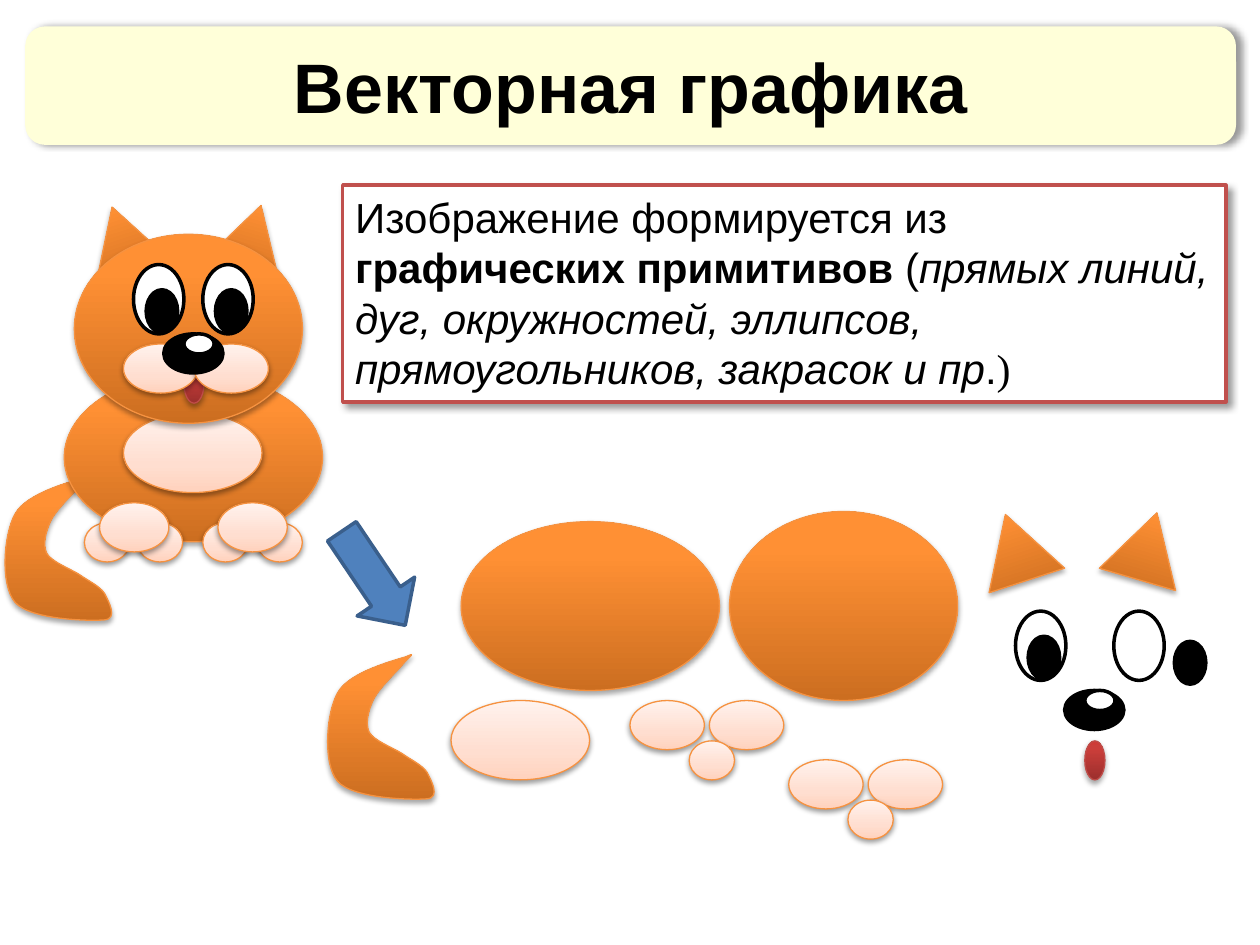
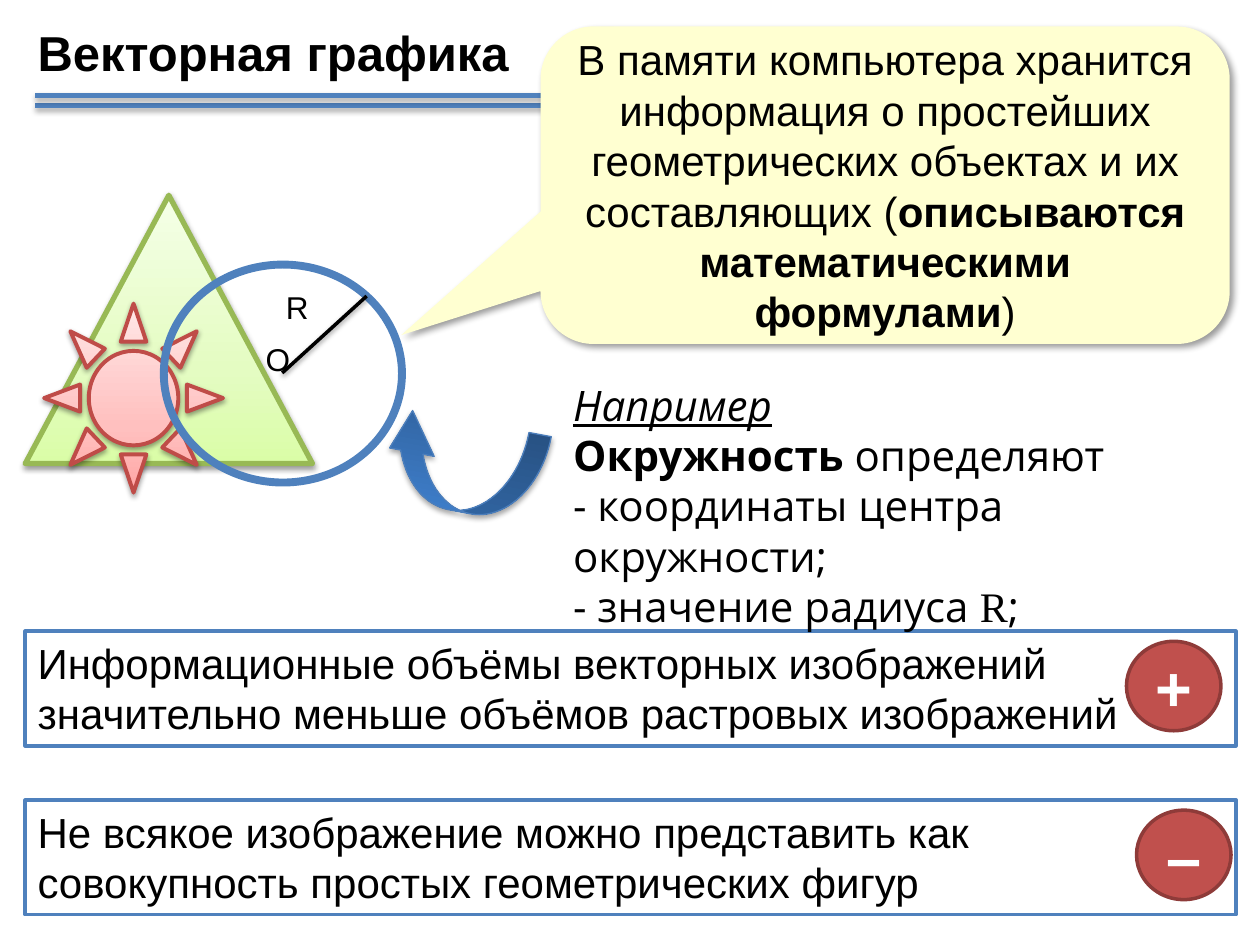
"""Build two slides about vector graphics."""
from dataclasses import dataclass, field

from lxml.etree import SubElement
from pptx import Presentation
from pptx.dml.color import RGBColor as Rgb
from pptx.enum.shapes import MSO_CONNECTOR as Connector, MSO_SHAPE as Shape
from pptx.enum.text import MSO_ANCHOR as Anchor, MSO_AUTO_SIZE as AutoSize, PP_ALIGN as Align
from pptx.oxml.ns import qn
from pptx.util import Inches, Pt

DEEP = ("000000", 35, 3.1, 1.8, 90)
SOFT = ("000000", 38, 3.1, 1.6, 90)
FUR = [(0, "CC6E20"), (80, "FF9034"), (100, "FF9136")]
PALE = [(0, "FFD2BD"), (35, "FFDED0"), (100, "FFF2ED")]
TONGUE = [(0, "9C2F2D"), (80, "CB3E3A"), (100, "CE3B37")]
LEAF = [(0, "DAFDA7"), (35, "E4FCC2"), (100, "F5FFE7")]
ROSE = [(0, "FFA6A5"), (35, "FFC0BF"), (100, "FFE7E7")]
WAVE = [(0, "2F5F99"), (80, "3D7CC7"), (100, "3A7CCB")]


@dataclass(frozen=True)
class Theme:
    """Fonts, sizes and looks: fill, line (colour, width) and shadow."""
    font: str = "Arial"
    serif: str = "Times New Roman"
    sans: str = "Open Sans"
    ink: str = "000000"
    white: str = "FFFFFF"
    blue: str = "4F81BD"
    body: int = 24
    label: int = 18
    heading: int = 28
    title: int = 40
    sign: int = 36
    looks: dict = field(default_factory=lambda: {
        "fur": (FUR, ("F69240", 0.75), DEEP),
        "pale": (PALE, ("F69240", 0.75), SOFT),
        "tongue": (TONGUE, ("BF4C48", 0.75), DEEP),
        "white": ("FFFFFF", ("000000", 2), None),
        "black": ("000000", ("000000", 2), None),
        "arrow": ("4F81BD", ("3A5F8C", 2), None),
        "band": ("FFFFD9", None, ("000000", 40, 4, 3, 0)),
        "callout": ("FFFFD1", None, ("000000", 40, 4, 3, 45)),
        "definition": ("FFFFFF", ("C0504D", 2), ("000000", 40, 4, 3, 45)),
        "note": ("FFFFFF", ("4F81BD", 2), None),
        "sign": ("C0504D", ("8E3B39", 2), None),
        "ring": (None, ("4F81BD", 4.5), None),
        "leaf": (LEAF, ("98B955", 3), SOFT),
        "sun": (ROSE, ("BF4C48", 2.25), SOFT),
        "wave": (WAVE, ("4B7EBC", 0.75), DEEP),
    })


THEME = Theme()

PARTS = {
    "body": (Shape.OVAL, 2.05, 1.34, "fur", 0),
    "belly": (Shape.OVAL, 1.1, 0.63, "pale", 0),
    "right ear": (Shape.ISOSCELES_TRIANGLE, 0.63, 0.55, "fur", 16.3),
    "left ear": (Shape.ISOSCELES_TRIANGLE, 0.63, 0.55, "fur", 342),
    "head": (Shape.OVAL, 1.81, 1.5, "fur", 0),
    "eye": (Shape.OVAL, 0.4, 0.55, "white", 0),
    "pupil": (Shape.OVAL, 0.25, 0.34, "black", 0),
    "tongue": (Shape.OVAL, 0.16, 0.31, "tongue", 0),
    "cheek": (Shape.OVAL, 0.59, 0.39, "pale", 0),
    "nose": (Shape.OVAL, 0.47, 0.31, "black", 0),
    "glint": (Shape.OVAL, 0.24, 0.16, "white", 0),
    "toe": (Shape.OVAL, 0.36, 0.31, "pale", 0),
    "paw": (Shape.OVAL, 0.55, 0.39, "pale", 0),
}

WHOLE_CAT = [
    ("body", 0.51, 2.96), ("belly", 0.98, 3.28),
    ("right ear", 1.68, 1.62), ("left ear", 0.66, 1.63), ("head", 0.59, 1.86),
    ("eye", 1.06, 2.1), ("pupil", 1.16, 2.3), ("eye", 1.61, 2.1), ("pupil", 1.71, 2.3),
    ("tongue", 1.46, 2.89), ("cheek", 0.98, 2.73), ("cheek", 1.54, 2.73),
    ("nose", 1.3, 2.65), ("glint", 1.46, 2.65),
    ("toe", 0.67, 4.15), ("toe", 1.09, 4.15), ("paw", 0.79, 3.99),
    ("toe", 1.61, 4.15), ("toe", 2.04, 4.15), ("paw", 1.73, 3.99),
]

LOOSE_HEAD = [
    ("body", 3.66, 4.14), ("belly", 3.58, 5.56),
    ("right ear", 8.79, 4.06), ("left ear", 7.75, 4.07), ("head", 5.79, 4.06),
    ("eye", 8.84, 4.85), ("pupil", 9.32, 5.09),
]
LOOSE_EYE = [("eye", 8.06, 4.85), ("pupil", 8.16, 5.05)]
LOOSE_MUZZLE = [("tongue", 8.61, 5.88), ("cheek", 5, 5.56), ("cheek", 5.63, 5.56)]
LOOSE_NOSE = [("nose", 8.45, 5.48), ("glint", 8.61, 5.48)]
LOOSE_PAWS = [("toe", 5.47, 5.88), ("cheek", 6.26, 6.03), ("cheek", 6.89, 6.03),
              ("toe", 6.73, 6.35)]

TAIL_START = (0.67, 0.04)
TAIL_CURVES = [
    ((0.58, 0.07), (0.21, 0.16), (0.12, 0.33)),
    ((0.03, 0.49), (0, 0.89), (0.12, 1.03)),
    ((0.24, 1.17), (0.71, 1.18), (0.83, 1.17)),
    ((0.94, 1.16), (0.86, 1.02), (0.83, 0.96)),
    ((0.79, 0.9), (0.7, 0.86), (0.63, 0.81)),
    ((0.55, 0.76), (0.41, 0.71), (0.37, 0.64)),
    ((0.34, 0.57), (0.36, 0.48), (0.4, 0.39)),
    ((0.44, 0.3), (0.58, 0.17), (0.63, 0.11)),
    ((0.68, 0.05), (0.75, 0), TAIL_START),
]


def rgb(code):
    """Turn a hex code into a colour."""
    return Rgb.from_string(code)


def paint_gradient(shape, stops):
    """Fill a shape with vertical colour stops, the first at the bottom."""
    shape.fill.gradient()
    shape.fill.gradient_angle = 90
    stop_list = shape.element.spPr.find(qn("a:gradFill")).find(qn("a:gsLst"))
    for old_stop in list(stop_list):
        stop_list.remove(old_stop)
    for percent, code in stops:
        stop = SubElement(stop_list, qn("a:gs"), pos=str(percent * 1000))
        SubElement(stop, qn("a:srgbClr"), val=code)


def cast_shadow(shape, shadow):
    """Replace the theme shadow by the given one, or by none."""
    effects = SubElement(shape.element.spPr, qn("a:effectLst"))
    if shadow:
        code, alpha, blur, distance, angle = shadow
        outer = SubElement(effects, qn("a:outerShdw"), blurRad=str(Pt(blur)),
                           dist=str(Pt(distance)), dir=str(angle * 60000), rotWithShape="0")
        color = SubElement(outer, qn("a:srgbClr"), val=code)
        SubElement(color, qn("a:alpha"), val=str(alpha * 1000))


def draw_line(line, code, width):
    """Set the colour and width of a line."""
    line.color.rgb = rgb(code)
    line.width = Pt(width)


def apply_look(shape, look):
    """Give a shape the fill, line and shadow of a named look."""
    fill, line, shadow = THEME.looks[look]
    if fill is None:
        shape.fill.background()
    elif isinstance(fill, str):
        shape.fill.solid()
        shape.fill.fore_color.rgb = rgb(fill)
    else:
        paint_gradient(shape, fill)
    if line:
        draw_line(shape.line, *line)
    else:
        shape.line.fill.background()
    cast_shadow(shape, shadow)


def add_figure(page, kind, place, look, rotation=0, adjustments=()):
    """Add a preset shape with a named look."""
    shape = page.shapes.add_shape(kind, *map(Inches, place))
    shape.rotation = rotation
    for index, value in enumerate(adjustments):
        shape.adjustments[index] = value
    apply_look(shape, look)
    return shape


def write(shape, paragraphs, align=Align.LEFT, anchor=Anchor.TOP, grow=False, **base):
    """Write paragraphs of (text, format) spans into a shape."""
    frame = shape.text_frame
    frame.word_wrap = True
    frame.vertical_anchor = anchor
    frame.auto_size = AutoSize.SHAPE_TO_FIT_TEXT if grow else AutoSize.NONE
    defaults = {"name": THEME.font, "size": THEME.body, "color": THEME.ink, **base}
    for index, spans in enumerate(paragraphs):
        para = frame.add_paragraph() if index else frame.paragraphs[0]
        para.alignment = align
        for text, changes in spans:
            if text == "\n":
                para.add_line_break()
                continue
            span = para.add_run()
            span.text = text
            values = {**defaults, **changes}
            span.font.color.rgb = rgb(values.pop("color"))
            span.font.size = Pt(values.pop("size"))
            for attribute, value in values.items():
                setattr(span.font, attribute, value)


def add_text(page, place, paragraphs, **options):
    """Add a text box."""
    write(page.shapes.add_textbox(*map(Inches, place)), paragraphs, **options)


def add_rule(page, start, end, code, width, shadow):
    """Add a straight line."""
    rule = page.shapes.add_connector(Connector.STRAIGHT, *map(Inches, start + end))
    draw_line(rule.line, code, width)
    cast_shadow(rule, shadow)


def bend_segments(shape):
    """Turn each three straight segments of an outline into one cubic curve."""
    outline = next(shape.element.iter(qn("a:path")))
    segments = outline.findall(qn("a:lnTo"))
    for index in range(0, len(segments), 3):
        curve = SubElement(outline, qn("a:cubicBezTo"))
        for segment in segments[index:index + 3]:
            curve.append(segment[0])
            outline.remove(segment)
    outline.append(outline.find(qn("a:close")))


def add_tail(page, left, top):
    """Add the curved tail of the cat."""
    start, *points = [(Inches(left + x), Inches(top + y))
                      for x, y in [TAIL_START, *sum(TAIL_CURVES, ())]]
    builder = page.shapes.build_freeform(*start)
    builder.add_line_segments(points, close=True)
    tail = builder.convert_to_shape()
    bend_segments(tail)
    apply_look(tail, "fur")


def add_parts(page, parts):
    """Add the placed parts of a cat."""
    for name, left, top in parts:
        kind, width, height, look, rotation = PARTS[name]
        add_figure(page, kind, (left, top, width, height), look, rotation)


def add_note(page, top, text):
    """Add a wide framed note."""
    note = add_figure(page, Shape.RECTANGLE, (0.2, top, 9.61, 0.91), "note")
    write(note, [[(text, {})]], grow=True)


def add_sign(page, left, top, symbol):
    """Add a round badge with a plus or minus."""
    badge = add_figure(page, Shape.OVAL, (left, top, 0.75, 0.71), "sign")
    write(badge, [[(symbol, {"bold": True}), (" ", {"size": THEME.label})]],
          Align.CENTER, Anchor.MIDDLE, size=THEME.sign, color=THEME.white)


def build_primitives_page(page):
    """Show a cat and the primitives it is made of."""
    add_figure(page, Shape.DOWN_ARROW, (2.69, 4.14, 0.55, 0.9), "arrow", 326)
    band = add_figure(page, Shape.ROUNDED_RECTANGLE, (0.2, 0.21, 9.61, 0.94), "band")
    write(band, [[("Векторная графика", {})]], Align.CENTER, Anchor.MIDDLE,
          size=THEME.title, bold=True)
    definition = add_figure(page, Shape.RECTANGLE, (2.72, 1.47, 7.01, 1.72), "definition")
    write(definition, [[
        ("Изображение формируется из ", {}),
        ("графических примитивов ", {"bold": True}),
        ("(", {}),
        ("прямых линий, дуг, окружностей, эллипсов, прямоугольников, закрасок и пр",
         {"italic": True}),
        (".", {}),
        (")", {"name": THEME.serif}),
    ]], grow=True)
    cat = page.shapes.add_group_shape()
    add_tail(cat, 0, 3.75)
    add_parts(cat, WHOLE_CAT)
    add_tail(page, 2.56, 5.17)
    add_parts(page, LOOSE_HEAD)
    add_parts(page.shapes.add_group_shape(), LOOSE_EYE)
    add_parts(page, LOOSE_MUZZLE)
    add_parts(page.shapes.add_group_shape(), LOOSE_NOSE)
    add_parts(page, LOOSE_PAWS)


def build_formulas_page(page):
    """Explain how geometric objects are stored."""
    add_note(page, 5.01, "Информационные объёмы векторных изображений "
                         "значительно меньше объёмов растровых изображений")
    add_figure(page, Shape.ISOSCELES_TRIANGLE, (0.2, 1.55, 2.28, 2.13), "leaf")
    add_figure(page, Shape.SUN, (0.35, 2.41, 1.42, 1.5), "sun")
    rules = page.shapes.add_group_shape()
    for height in (0.84, 0.76):
        add_rule(rules, (5.55, height), (0.28, height), THEME.blue, 3, DEEP)
    add_text(page, (0.2, 0.13, 9.8, 0.47), [[("Векторная графика", {})]],
             size=THEME.heading, bold=True)
    callout = add_figure(page, Shape.ROUNDED_RECTANGULAR_CALLOUT, (4.29, 0.21, 5.47, 2.52),
                         "callout", adjustments=(-0.702, 0.472, 0.167))
    write(callout, [[
        ("В памяти компьютера хранится информация о простейших "
         "геометрических объектах и их составляющих (", {}),
        ("описываются математическими формулами", {"bold": True}),
        (")", {}),
    ]], Align.CENTER, Anchor.MIDDLE)
    add_sign(page, 8.94, 5.09, "+")
    add_figure(page, Shape.OVAL, (1.3, 2.1, 1.89, 1.73), "ring")
    add_text(page, (4.45, 2.96, 5.55, 1.72), [
        [("Например", {"italic": True, "underline": True}), (" ", {})],
        [("Окружность ", {"bold": True}), ("определяют", {})],
        [("- координаты центра окружности;", {}), ("\n", {}),
         ("- значение радиуса\u00a0", {}), ("R", {"name": THEME.serif}), (";", {})],
    ], name=THEME.sans, grow=True)
    add_rule(page, (2.24, 2.96), (2.91, 2.35), THEME.ink, 2, SOFT)
    for letter, left, top in (("R", 2.17, 2.24), ("O", 2.01, 2.65)):
        add_text(page, (left, top, 0.31, 0.4), [[(letter, {})]], size=THEME.label, grow=True)
    swoosh = add_figure(page, Shape.CURVED_DOWN_ARROW, (3.02, 3.34, 1.3, 0.72), "wave", 10.7,
                        (0.25, 0.5, 0.452))
    for flip in ("flipH", "flipV"):
        swoosh.element.spPr.find(qn("a:xfrm")).set(flip, "1")
    add_note(page, 6.35, "Не всякое изображение можно представить как "
                         "совокупность простых геометрических фигур")
    add_sign(page, 9.02, 6.43, "–")


def main():
    """Build and save the deck."""
    deck = Presentation()
    deck.slide_width, deck.slide_height = Inches(10), Inches(7.5)
    for build in (build_primitives_page, build_formulas_page):
        build(deck.slides.add_slide(deck.slide_layouts[6]))
    deck.save("out.pptx")


if __name__ == "__main__":
    main()
